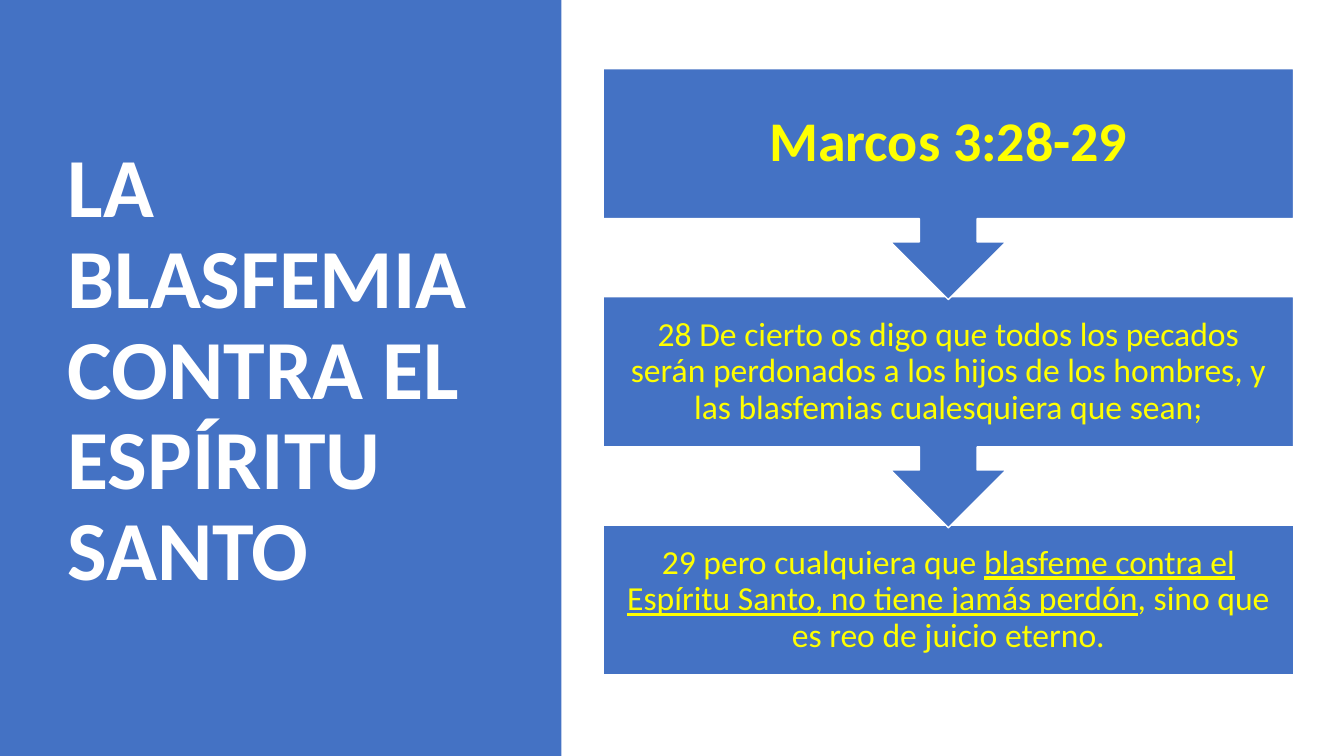
from pptx import Presentation
from pptx.dml.color import RGBColor
from pptx.enum.shapes import MSO_SHAPE
from pptx.enum.text import MSO_ANCHOR, PP_ALIGN
from pptx.util import Cm, Pt

BLUE = RGBColor(0x44, 0x72, 0xC4)
WHITE = RGBColor(0xFF, 0xFF, 0xFF)
YELLOW = RGBColor(0xFF, 0xFF, 0x00)


def add_block(kind, left, top, width, height):
    block = slide.shapes.add_shape(kind, Cm(left), Cm(top), Cm(width), Cm(height))
    block.shadow.inherit = False
    block.fill.solid()
    block.fill.fore_color.rgb = BLUE
    return block


def set_font(para, size, color, bold):
    para.line_spacing = 0.9
    para.font.name = "Calibri"
    para.font.size = Pt(size)
    para.font.bold = bold
    para.font.color.rgb = color


deck = Presentation()
deck.slide_width = Cm(33.87)
deck.slide_height = Cm(19.05)
slide = deck.slides.add_slide(deck.slide_layouts[5])

title = slide.shapes.title
title.left, title.top = Cm(1.45), Cm(1.73)
title.width, title.height = Cm(10.57), Cm(15.29)
title.text_frame.text = "LA BLASFEMIA CONTRA EL ESPÍRITU SANTO"
title.text_frame.word_wrap = True
title.text_frame.margin_right = Cm(0)
title.text_frame.vertical_anchor = MSO_ANCHOR.MIDDLE
head = title.text_frame.paragraphs[0]
head.alignment = PP_ALIGN.LEFT
set_font(head, 60, WHITE, True)

panel = add_block(MSO_SHAPE.RECTANGLE, 0, 0, 14.15, 19.05)
panel.line.fill.background()
title.element.addprevious(panel.element)

CALLOUT = MSO_SHAPE.DOWN_ARROW_CALLOUT
steps = [
    (CALLOUT, 5.82, 40, 0.79, ["Marcos 3:28-29"]),
    (CALLOUT, 5.82, 24, 0.48, [
        "28 De cierto os digo que todos los pecados serán perdonados "
        "a los hijos de los hombres, y las blasfemias cualesquiera que sean;"]),
    (MSO_SHAPE.RECTANGLE, 3.78, 24, 0.48, [
        "29 pero cualquiera que ",
        "blasfeme contra el Espíritu Santo, no tiene jamás perdón",
        ", sino que es reo de juicio eterno."]),
]
for row, (kind, height, size, inset, parts) in reversed(list(enumerate(steps))):
    step = add_block(kind, 15.2, 1.73 + row * 5.75, 17.4, height)
    step.line.color.rgb = WHITE
    step.line.width = Pt(1)
    frame = step.text_frame
    frame.word_wrap = True
    frame.vertical_anchor = MSO_ANCHOR.MIDDLE
    frame.margin_left = frame.margin_right = Cm(inset)
    frame.margin_top = frame.margin_bottom = Cm(inset)
    para = frame.paragraphs[0]
    para.alignment = PP_ALIGN.CENTER
    set_font(para, size, YELLOW, row == 0)
    for spot, part in enumerate(parts):
        run = para.add_run()
        run.text = part
        if spot == 1:
            run.font.underline = True

deck.save("out.pptx")
